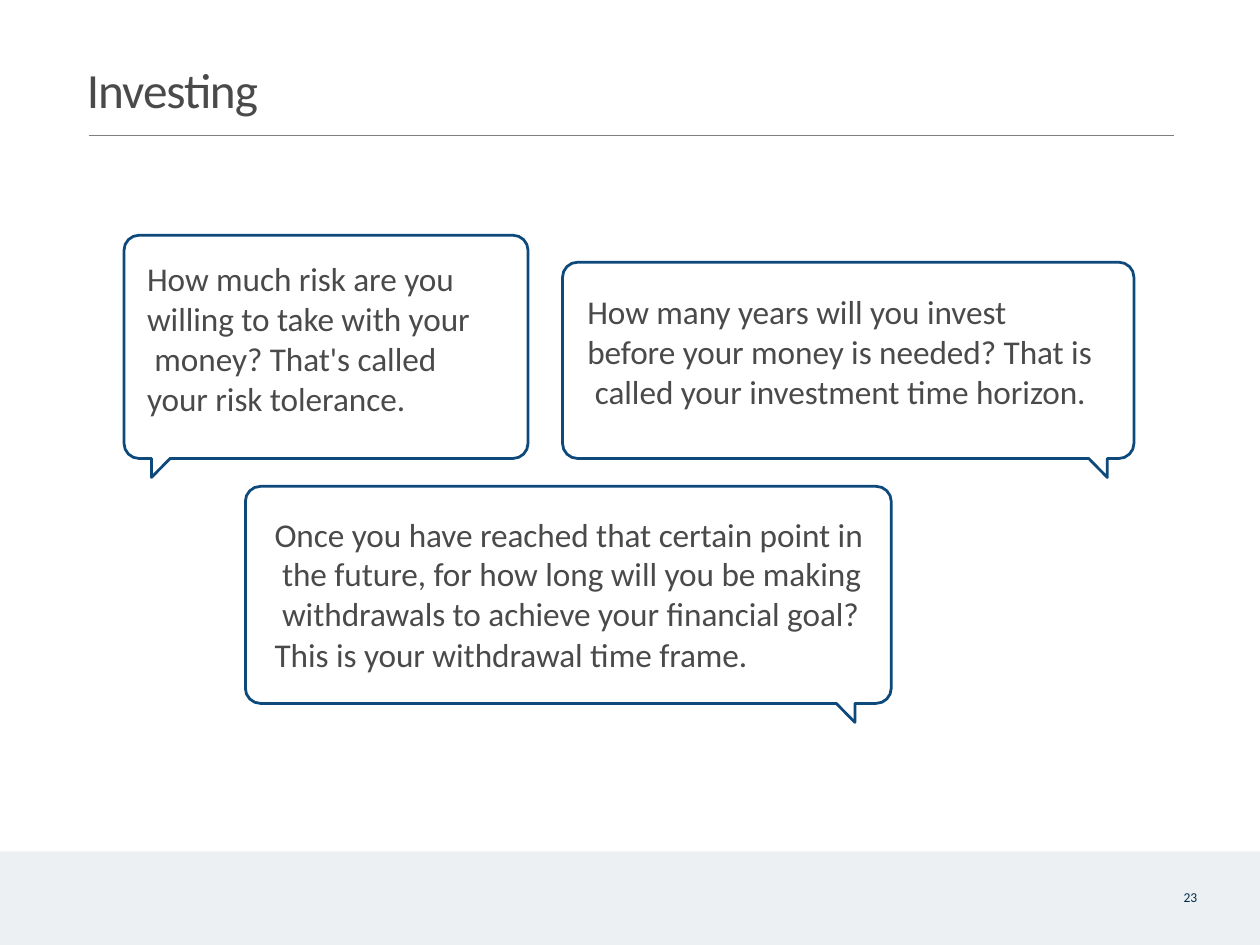
import math
from lxml import etree
from pptx import Presentation
from pptx import util as u
from pptx.dml.color import RGBColor
from pptx.enum import shapes, text
from pptx.oxml import ns

COLORS = {
    "text": "4A4A4A",
    "bubble": "0D497B",
    "rule": "7F7F7F",
    "footer": "EDF0F3",
    "number": "002B49",
}
COLUMNS, ROWS = 128, 96
CORNER = 1.53
TAIL_WIDTH, TAIL_DEPTH = 1.89, 1.93


class SlideBuilder:
    font = "Calibri"

    def __init__(self, deck):
        self.slide = deck.slides.add_slide(deck.slide_layouts[6])
        self.column = deck.slide_width / COLUMNS
        self.row = deck.slide_height / ROWS

    def color(self, name):
        return RGBColor.from_string(COLORS[name])

    def point(self, column, row):
        return round(column * self.column), round(row * self.row)

    def area(self, left, top, width, height):
        return *self.point(left, top), *self.point(width, height)

    def band(self, left, top, width, height, color):
        band = self.slide.shapes.add_shape(
            shapes.MSO_SHAPE.RECTANGLE, *self.area(left, top, width, height))
        band.shadow.inherit = False
        band.fill.solid()
        band.fill.fore_color.rgb = self.color(color)
        band.line.fill.background()

    def rule(self, left, right, row, color, weight=1):
        rule = self.slide.shapes.add_connector(
            shapes.MSO_CONNECTOR.STRAIGHT,
            *self.point(left, row), *self.point(right, row))
        rule.line.color.rgb = self.color(color)
        rule.line.width = u.Pt(weight)
        etree.SubElement(rule._element.spPr, ns.qn("a:effectLst"))

    def corner(self, column, row, start):
        angles = [math.radians(start + step * 22.5) for step in range(5)]
        return [(column + CORNER * math.cos(angle), row + CORNER * math.sin(angle))
                for angle in angles]

    def bubble(self, left, top, width, height, tail, lean):
        right, bottom = left + width, top + height
        tip = left + tail
        base = sorted([tip, tip + lean * TAIL_WIDTH])
        outline = [
            *self.corner(left + CORNER, top + CORNER, 180),
            *self.corner(right - CORNER, top + CORNER, 270),
            *self.corner(right - CORNER, bottom - CORNER, 0),
            (base[1], bottom),
            (tip, bottom + TAIL_DEPTH),
            (base[0], bottom),
            *self.corner(left + CORNER, bottom - CORNER, 90),
        ]
        points = [self.point(*place) for place in outline]
        builder = self.slide.shapes.build_freeform(*points[0])
        builder.add_line_segments(points[1:], close=True)
        bubble = builder.convert_to_shape()
        bubble.shadow.inherit = False
        bubble.fill.background()
        bubble.line.color.rgb = self.color("bubble")
        bubble.line.width = u.Pt(2.25)

    def words(self, left, top, width, height, content, size=27,
              color="text", spacing=0, before=1, indent=0.01):
        box = self.slide.shapes.add_textbox(*self.area(left, top, width, height))
        frame = box.text_frame
        frame.word_wrap = True
        frame.margin_left = u.Inches(indent)
        frame.margin_right = frame.margin_bottom = 0
        frame.margin_top = u.Inches(0.01)
        frame.text = content
        for para in frame.paragraphs:
            para.alignment = text.PP_ALIGN.LEFT
            para.space_before = u.Pt(before)
            for span in para.runs:
                span.font.name = self.font
                span.font.size = u.Pt(size)
                span.font.color.rgb = self.color(color)
                span.font._element.set("spc", str(round(spacing * 100)))


def main():
    deck = Presentation()
    deck.slide_width, deck.slide_height = u.Inches(14.22), u.Inches(10.67)
    page = SlideBuilder(deck)

    page.band(0, 86.49, COLUMNS, ROWS - 86.49, "footer")
    page.words(8.73, 5.94, 18.36, 6.21, "Investing", size=40, spacing=-0.8)
    page.rule(9, 119.25, 13.77, "rule")

    questions = [
        ((12.6, 23.9, 41.04, 22.68), (2.79, 1), (14.85, 26.19, 34.5, 16.47),
         "How much risk are you\vwilling to take with your\v"
         " money? That's called\vyour risk tolerance."),
        ((57.15, 26.64, 58.05, 19.94), (55.35, -1), (59.58, 29.52, 53, 12.42),
         "How many years will you invest\vbefore your money is needed? That is\v"
         " called your investment time horizon."),
        ((24.93, 49.41, 65.61, 22.05), (61.92, -1), (27.81, 52.11, 61.5, 16.47),
         "Once you have reached that certain point in\v"
         " the future, for how long will you be making\v"
         " withdrawals to achieve your financial goal?\n"
         "This is your withdrawal time frame."),
    ]
    for body, tail, place, content in questions:
        page.bubble(*body, *tail)
        page.words(*place, content, spacing=-0.05)

    page.words(119.97, 90.27, 2.07, 1.8, "23", size=11, color="number",
               before=1.4, indent=0.03)
    deck.save("out.pptx")


if __name__ == "__main__":
    main()
